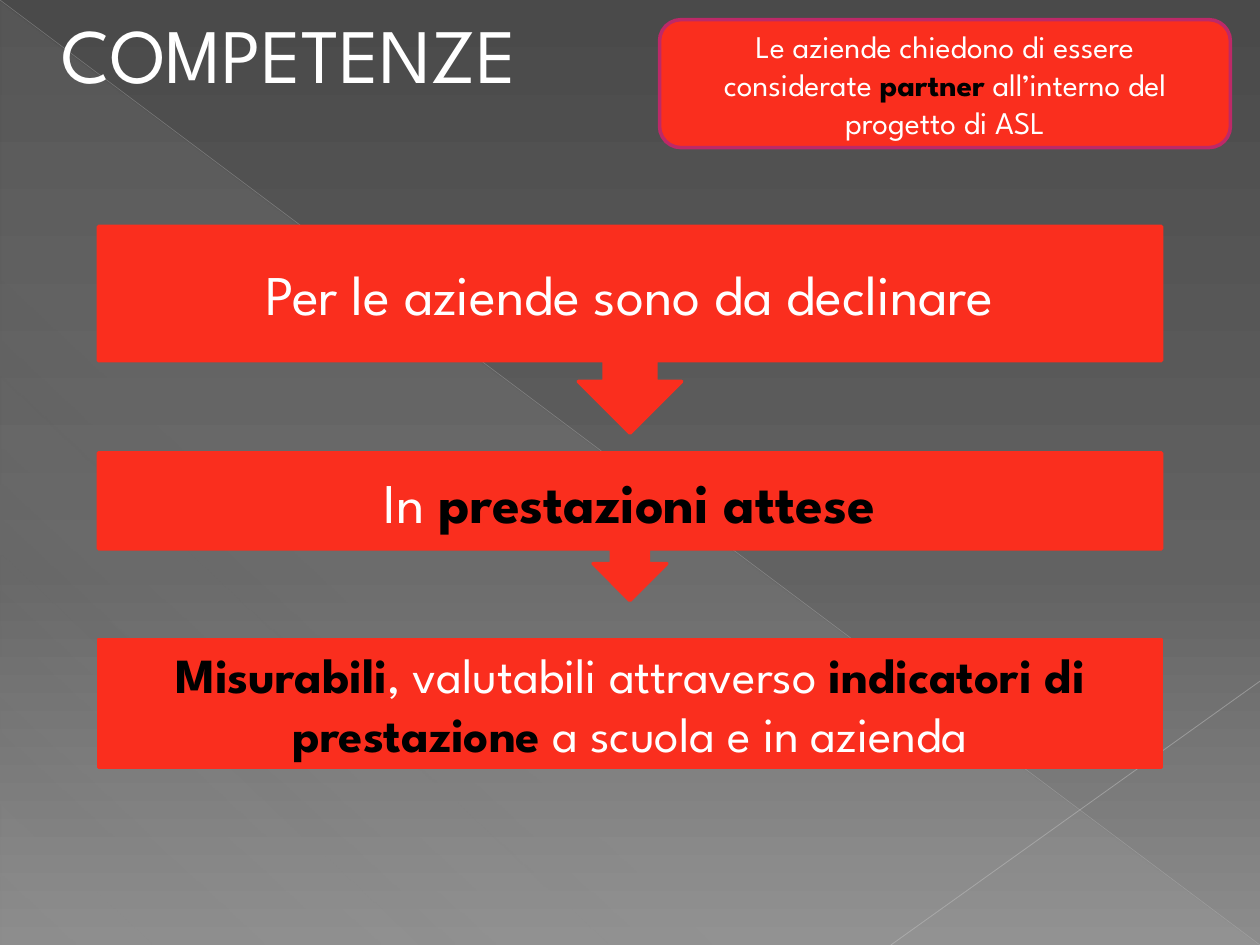
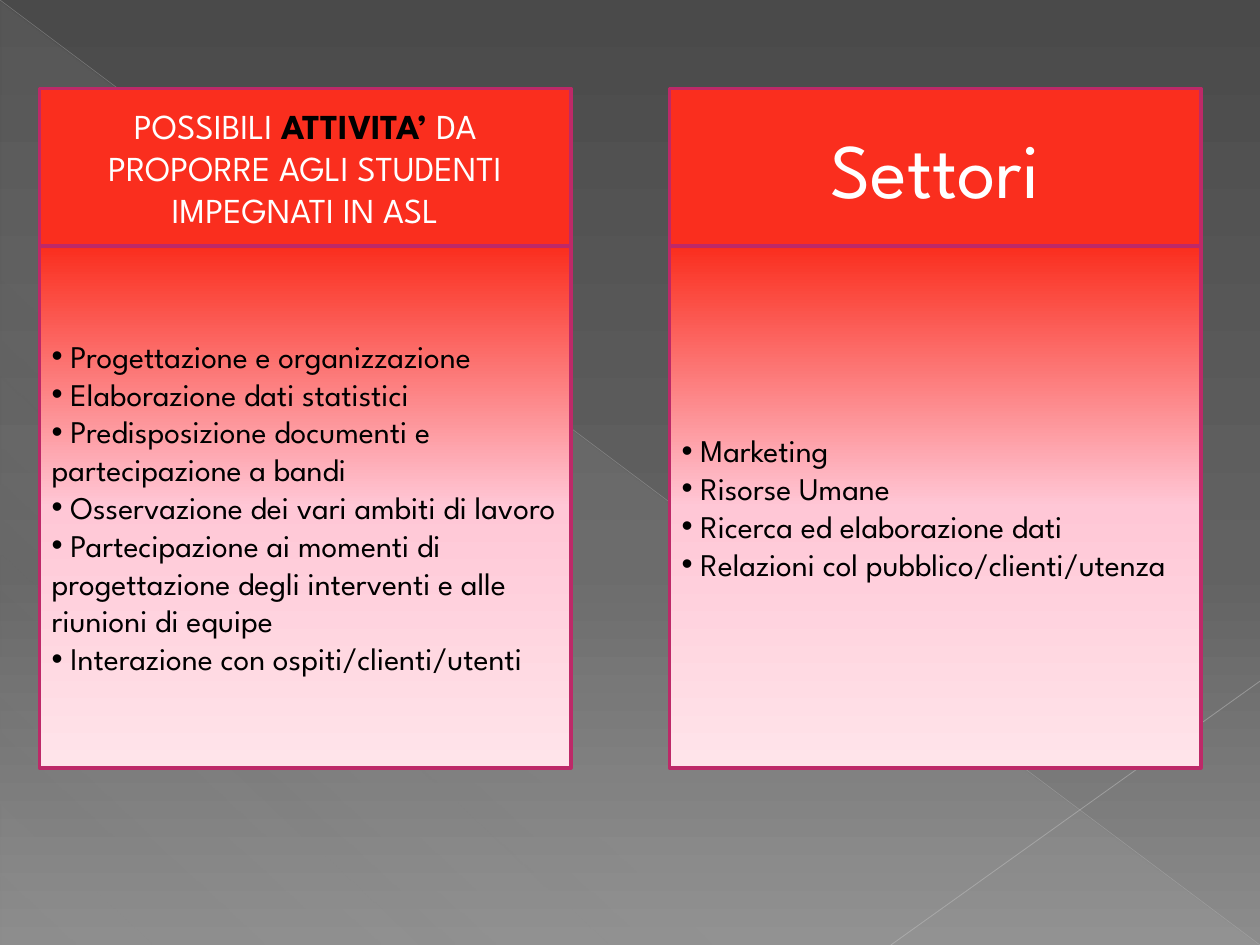
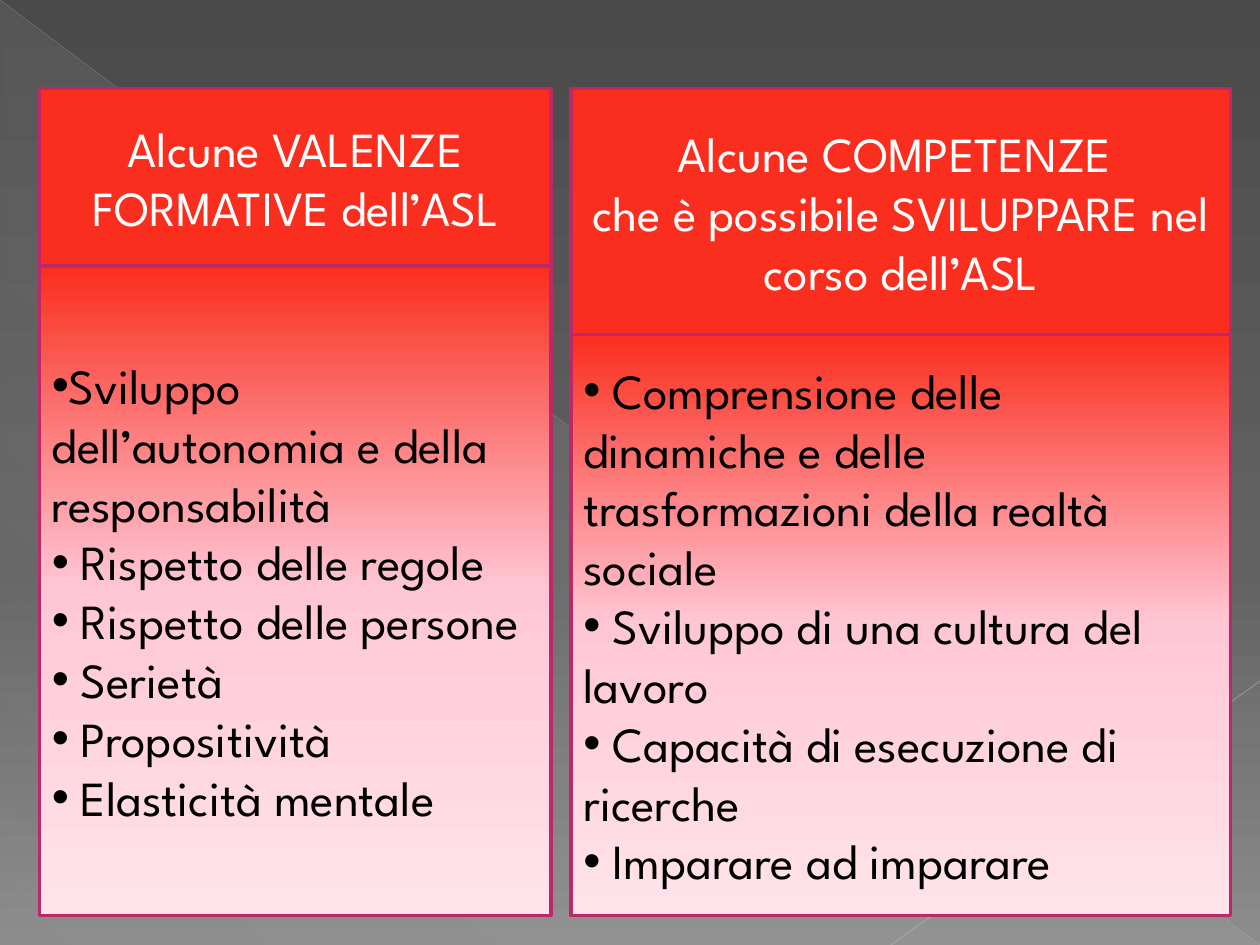
from dataclasses import dataclass

from lxml.etree import SubElement
from pptx import Presentation
from pptx.dml.color import RGBColor
from pptx.enum.shapes import MSO_CONNECTOR, MSO_SHAPE
from pptx.enum.text import MSO_ANCHOR, MSO_AUTO_SIZE, PP_ALIGN
from pptx.oxml.ns import qn
from pptx.util import Inches, Pt

SLIDE_WIDTH = Inches(10)
SLIDE_HEIGHT = Inches(7.5)
COLUMNS = 64
ROWS = 48
FONT = "League Spartan"
COLORS = {
    "red": "FA2E1E",
    "magenta": "BD2968",
    "pink": "FFC7D6",
    "pale_pink": "FFE4EA",
    "white": "FFFFFF",
    "black": "000000",
    "dark_gray": "4A4A4A",
    "middle_gray": "626262",
    "light_gray": "8C8C8C",
    "veil": "D2D2D2",
    "long_line": "BFBFBF",
    "short_line": "C6C6C6",
}
BACKGROUND_STOPS = [(0, "dark_gray", 100), (60, "middle_gray", 100), (100, "light_gray", 100)]
VEIL_STOPS = [(0, "veil", 10), (70, "veil", 8), (100, "veil", 1)]
PANEL_STOPS = [(0, "red", 100), (50, "pink", 100), (100, "pale_pink", 100)]


@dataclass
class Box:
    left: float
    top: float
    width: float
    height: float

    def rows(self, start, count):
        return Box(self.left, self.top + start, self.width, count)

    def lengths(self):
        return (across(self.left), down(self.top), across(self.width), down(self.height))


def across(columns):
    return round(SLIDE_WIDTH * columns / COLUMNS)


def down(rows):
    return round(SLIDE_HEIGHT * rows / ROWS)


def color(name):
    return RGBColor.from_string(COLORS[name])


def set_opacity(color_element, percent):
    SubElement(color_element, qn("a:alpha")).set("val", str(percent * 1000))


def fill_gradient(fill, owner, stops, angle):
    fill.gradient()
    gradient = owner.find(".//" + qn("a:gradFill"))
    stop_list = gradient.find(qn("a:gsLst"))
    stop_list.clear()
    for position, name, opacity in stops:
        stop = SubElement(stop_list, qn("a:gs"))
        stop.set("pos", str(position * 1000))
        color_element = SubElement(stop, qn("a:srgbClr"))
        color_element.set("val", COLORS[name])
        if opacity < 100:
            set_opacity(color_element, opacity)
    gradient.find(qn("a:lin")).set("ang", str(angle * 60000))


def add_run(paragraph, text, size, color_name, bold=False):
    run = paragraph.add_run()
    run.text = text
    run.font.name = FONT
    run.font.size = Pt(size)
    run.font.bold = bold
    run.font.color.rgb = color(color_name)


def next_paragraph(frame, index):
    return frame.add_paragraph() if index else frame.paragraphs[0]


def add_block(slide, kind, box, outline):
    shape = slide.shapes.add_shape(kind, *box.lengths())
    shape.shadow.inherit = False
    shape.fill.solid()
    shape.fill.fore_color.rgb = color("red")
    shape.line.color.rgb = color(outline)
    shape.line.width = Pt(2)
    shape.text_frame.word_wrap = True
    shape.text_frame.vertical_anchor = MSO_ANCHOR.MIDDLE
    return shape


def add_label(slide, kind, box, outline, size, paragraphs):
    frame = add_block(slide, kind, box, outline).text_frame
    for index, runs in enumerate(paragraphs):
        paragraph = next_paragraph(frame, index)
        paragraph.alignment = PP_ALIGN.CENTER
        for text, emphasized in runs:
            add_run(paragraph, text, size, "black" if emphasized else "white", emphasized)


def add_bullets(slide, box, size, items):
    shape = add_block(slide, MSO_SHAPE.RECTANGLE, box, "magenta")
    fill_gradient(shape.fill, shape.element, PANEL_STOPS, 90)
    for index, item in enumerate(items):
        paragraph = next_paragraph(shape.text_frame, index)
        paragraph.alignment = PP_ALIGN.LEFT
        properties = paragraph._p.get_or_add_pPr()
        SubElement(properties, qn("a:buFont")).set("typeface", "Arial")
        SubElement(properties, qn("a:buChar")).set("char", "•")
        add_run(paragraph, item, size, "black")


def add_panel(slide, box, header_rows, header_size, header, item_size, items):
    header_box = box.rows(0, header_rows)
    list_box = box.rows(header_rows, box.height - header_rows)
    add_label(slide, MSO_SHAPE.RECTANGLE, header_box, "magenta", header_size, header)
    add_bullets(slide, list_box, item_size, items)


def add_thin_line(slide, start, end, color_name, width, opacity):
    connector = slide.shapes.add_connector(
        MSO_CONNECTOR.STRAIGHT,
        across(start[0]), down(start[1]), across(end[0]), down(end[1]),
    )
    connector.line.color.rgb = color(color_name)
    connector.line.width = Pt(width)
    set_opacity(connector.element.find(".//" + qn("a:srgbClr")), opacity)
    SubElement(connector.element.spPr, qn("a:effectLst"))
    return connector


def decorate_master(master, slide):
    fill_gradient(master.background.fill, master.element, BACKGROUND_STOPS, 90)
    veil = slide.shapes.add_shape(
        MSO_SHAPE.RIGHT_TRIANGLE, *Box(0.05, 0.1, 63.9, 47.9).lengths()
    )
    veil.shadow.inherit = False
    fill_gradient(veil.fill, veil.element, VEIL_STOPS, 133)
    veil.line.fill.background()
    long_line = add_thin_line(slide, (0, 0), (64, 48), "long_line", 0.39, 35)
    short_line = add_thin_line(slide, (64, 34.6), (45.25, 48), "short_line", 0.47, 45)
    for index, shape in enumerate([veil, long_line, short_line]):
        shape.element.find(".//" + qn("p:cNvPr")).set("id", str(100 + index))
        master.shapes.element.insert(2 + index, shape.element)


def format_title(slide, box, text):
    title = slide.shapes.title
    title.left, title.top, title.width, title.height = box.lengths()
    frame = title.text_frame
    frame.auto_size = MSO_AUTO_SIZE.SHAPE_TO_FIT_TEXT
    frame.vertical_anchor = MSO_ANCHOR.TOP
    paragraph = frame.paragraphs[0]
    paragraph.alignment = PP_ALIGN.LEFT
    add_run(paragraph, text, 44, "white")


def build_competences(slide):
    format_title(slide, Box(2.5, 0, 31, 5.5), "COMPETENZE")
    add_label(
        slide, MSO_SHAPE.ROUNDED_RECTANGLE, Box(33.5, 1, 29, 6.5), "magenta", 18,
        [[
            ("Le aziende chiedono di essere considerate ", False),
            ("partner", True),
            (" all’interno del progetto di ASL", False),
        ]],
    )
    flow = Box(5, 11.5, 54, 27.5)
    steps = [
        (MSO_SHAPE.DOWN_ARROW_CALLOUT, 0, 10.5, 32,
         [("Per le aziende sono da declinare", False)]),
        (MSO_SHAPE.DOWN_ARROW_CALLOUT, 11.5, 7.5, 32,
         [("In ", False), ("prestazioni attese", True)]),
        (MSO_SHAPE.RECTANGLE, 21, 6.5, 28,
         [
             ("Misurabili", True),
             (", valutabili attraverso ", False),
             ("indicatori di prestazione", True),
             (" a scuola e in azienda", False),
         ]),
    ]
    for kind, start, count, size, runs in steps:
        add_label(slide, kind, flow.rows(start, count), "red", size, [runs])


def build_activities(slide):
    add_panel(
        slide, Box(2, 4.5, 27, 34.5), 8, 20,
        [[
            ("POSSIBILI ", False),
            ("ATTIVITA’ ", True),
            ("DA PROPORRE AGLI STUDENTI IMPEGNATI IN ASL", False),
        ]],
        18,
        [
            " Progettazione e organizzazione",
            " Elaborazione dati statistici",
            " Predisposizione documenti e partecipazione a bandi",
            " Osservazione dei vari ambiti di lavoro",
            " Partecipazione ai momenti di progettazione degli interventi e alle riunioni di equipe",
            " Interazione con ospiti/clienti/utenti",
        ],
    )
    add_panel(
        slide, Box(34, 4.5, 27, 34.5), 8, 44, [[("Settori", False)]], 18,
        [
            " Marketing",
            " Risorse Umane",
            " Ricerca ed elaborazione dati",
            " Relazioni col pubblico/clienti/utenza",
        ],
    )


def build_values(slide):
    add_panel(
        slide, Box(2, 4.5, 26, 42), 9, 28,
        [[("Alcune VALENZE FORMATIVE dell’ASL", False)]],
        28,
        [
            "Sviluppo dell’autonomia e della responsabilità",
            " Rispetto delle regole",
            " Rispetto delle persone",
            " Serietà",
            " Propositività",
            " Elasticità mentale",
        ],
    )
    add_panel(
        slide, Box(29, 4.5, 33.5, 42), 12.5, 28,
        [
            [("Alcune COMPETENZE ", False)],
            [("che è possibile SVILUPPARE nel corso dell’ASL", False)],
        ],
        28,
        [
            " Comprensione delle dinamiche e delle trasformazioni della realtà sociale",
            " Sviluppo di una cultura del lavoro",
            " Capacità di esecuzione di ricerche",
            " Imparare ad imparare",
        ],
    )


def main():
    presentation = Presentation()
    presentation.slide_width = SLIDE_WIDTH
    presentation.slide_height = SLIDE_HEIGHT
    title_only = presentation.slide_layouts.get_by_name("Title Only")
    blank = presentation.slide_layouts.get_by_name("Blank")
    pages = [
        (title_only, build_competences),
        (blank, build_activities),
        (blank, build_values),
    ]
    for layout, build in pages:
        build(presentation.slides.add_slide(layout))
    decorate_master(presentation.slide_master, presentation.slides[0])
    presentation.save("out.pptx")


if __name__ == "__main__":
    main()
